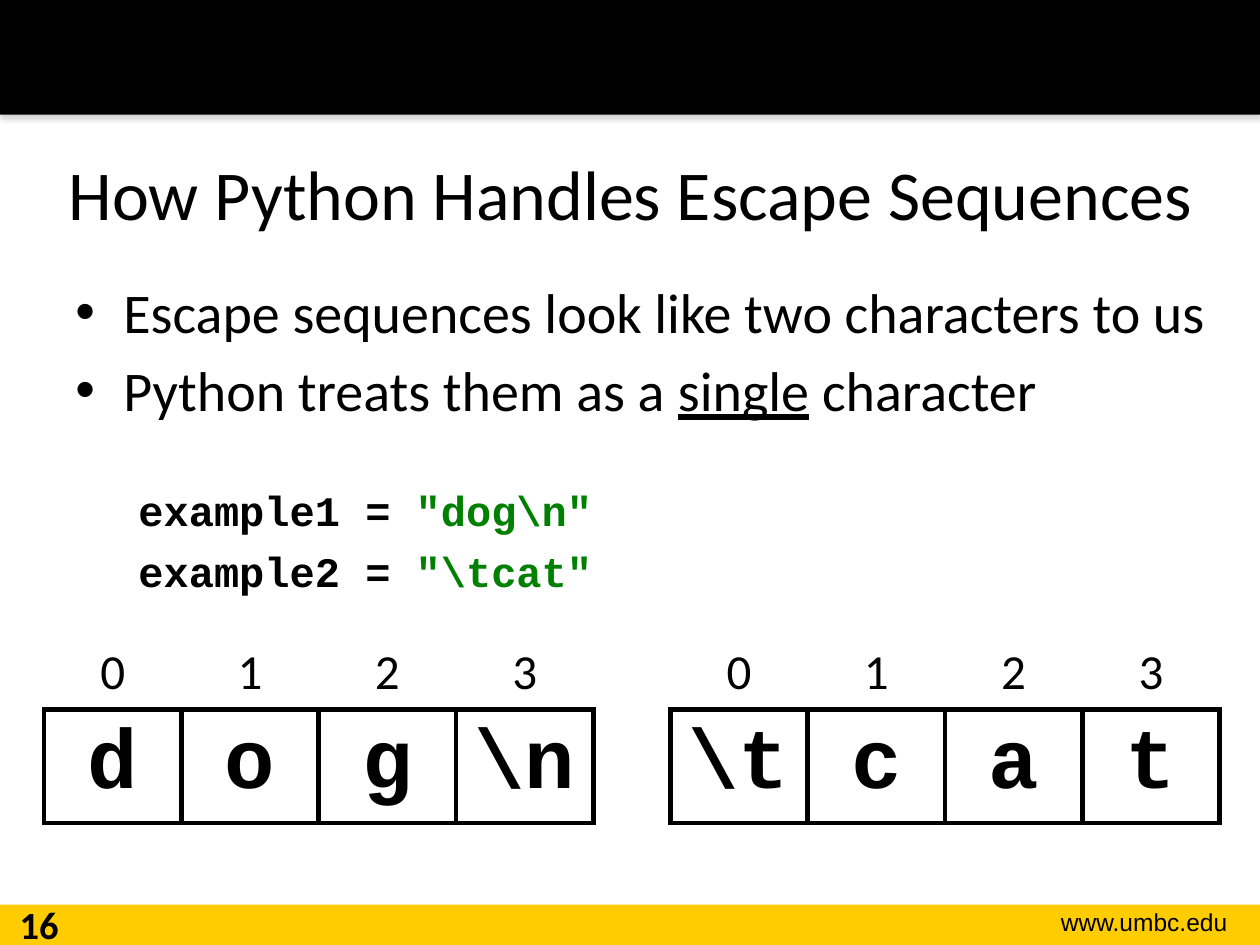
from lxml.etree import SubElement
from pptx import Presentation
from pptx.dml.color import RGBColor
from pptx.enum.shapes import MSO_SHAPE
from pptx.enum.text import MSO_ANCHOR, PP_ALIGN
from pptx.oxml import parse_xml
from pptx.oxml.ns import nsdecls, qn
from pptx.util import Inches, Pt

HUES = {"black": "000000", "white": "FFFFFF", "gold": "FFCC00",
        "green": "008000", "grey": "808080"}
FONTS = {
    "title": {"name": "Calibri", "size": Pt(40)},
    "point": {"name": "Calibri", "size": Pt(32)},
    "code": {"name": "Courier New", "size": Pt(24), "bold": True},
    "index": {"name": "Calibri", "size": Pt(28), "bold": False},
    "char": {"name": "Courier New", "size": Pt(48), "bold": True},
    "page": {"name": "Calibri", "size": Pt(22), "bold": True},
    "site": {"name": "Arial", "size": Pt(14)},
}


def add_run(para, text, kind, hue="black", line=False):
    run = para.add_run()
    run.text = text
    for key, value in FONTS[kind].items():
        setattr(run.font, key, value)
    run.font.color.rgb = RGBColor.from_string(HUES[hue])
    if line:
        run.font.underline = True


def add_box(left, top, width, height, anchor=MSO_ANCHOR.TOP):
    box = slide.shapes.add_textbox(Inches(left), Inches(top),
                                   Inches(width), Inches(height))
    frame = box.text_frame
    frame.word_wrap = True
    frame.vertical_anchor = anchor
    return frame


deck = Presentation()
deck.slide_width, deck.slide_height = Inches(10), Inches(7.5)
slide = deck.slides.add_slide(deck.slide_layouts[6])

# Bars at foot and head
for top, height, hue in [(7.18, 0.32, "gold"), (0, 0.91, "black")]:
    bar = slide.shapes.add_shape(MSO_SHAPE.RECTANGLE, 0, Inches(top),
                                 Inches(10), Inches(height))
    bar.shadow.inherit = False
    bar.fill.solid()
    bar.fill.fore_color.rgb = RGBColor.from_string(HUES[hue])
    bar.line.fill.background()

# Soft shadow under the head bar
glow = bar._element.spPr.find(qn("a:effectLst"))
shade = SubElement(glow, qn("a:outerShdw"), blurRad=str(Pt(3.1)),
                   dist=str(Pt(1.8)), dir="5400000", rotWithShape="0")
tint = SubElement(shade, qn("a:srgbClr"), val=HUES["grey"])
SubElement(tint, qn("a:alpha"), val="35000")

# Title, page number and site
labels = [
    ("How Python Handles Escape Sequences", "title", (0.32, 0.9, 9.37, 1.25),
     MSO_ANCHOR.MIDDLE, PP_ALIGN.CENTER),
    ("16", "page", (0, 7.1, 0.62, 0.4), MSO_ANCHOR.TOP, PP_ALIGN.CENTER),
    ("www.umbc.edu", "site", (7.85, 7.15, 1.99, 0.34),
     MSO_ANCHOR.TOP, PP_ALIGN.RIGHT),
]
for text, kind, place, anchor, align in labels:
    para = add_box(*place, anchor).paragraphs[0]
    para.alignment = align
    add_run(para, text, kind)

# Bullet points, then code lines: kind, space before, runs
lines = [
    ("point", 0, [("Escape sequences look like two characters to us",)]),
    ("point", 6.4, [("Python treats them as a ",),
                    ("single", "black", True), (" character",)]),
    ("code", 35, [("example1 = ",), (r'"dog\n"', "green")]),
    ("code", 6.4, [("example2 = ",), (r'"\tcat"', "green")]),
]
body = add_box(0.5, 2.15, 9.18, 4.55)
for i, (kind, gap, runs) in enumerate(lines):
    para = body.add_paragraph() if i else body.paragraphs[0]
    props = para._p.get_or_add_pPr()
    if kind == "point":
        props.set("marL", str(Inches(0.38)))
        props.set("indent", str(Inches(-0.38)))
        SubElement(props, qn("a:buFont"), typeface="Arial")
        SubElement(props, qn("a:buChar"), char="•")
    else:
        props.set("marL", str(Inches(0.5)))
    if gap:
        para.space_before = Pt(gap)
    for run in runs:
        add_run(para, run[0], kind, *run[1:])

# Character tables: index row above boxed characters
for left, chars in [(0.35, ["d", "o", "g", r"\n"]),
                    (5.32, [r"\t", "c", "a", "t"])]:
    grid = slide.shapes.add_table(2, 4, Inches(left), Inches(5.05),
                                  Inches(4.36), Inches(1.41)).table
    grid.first_row = grid.horz_banding = False
    grid.rows[0].height, grid.rows[1].height = Inches(0.58), Inches(0.83)
    rows = [("index", range(4), MSO_ANCHOR.BOTTOM, "B"),
            ("char", chars, MSO_ANCHOR.MIDDLE, "LRTB")]
    for r, (kind, texts, anchor, sides) in enumerate(rows):
        for c, text in enumerate(texts):
            grid.columns[c].width = Inches(1.09)
            cell = grid.cell(r, c)
            cell.vertical_anchor = anchor
            if kind == "char":
                cell.fill.solid()
                cell.fill.fore_color.rgb = RGBColor.from_string(HUES["white"])
            else:
                cell.fill.background()
            para = cell.text_frame.paragraphs[0]
            para.alignment = PP_ALIGN.CENTER
            add_run(para, str(text), kind)
            props = cell._tc.get_or_add_tcPr()
            for n, side in enumerate(sides):
                props.insert(n, parse_xml(
                    f'<a:ln{side} {nsdecls("a")} w="{Pt(3)}"><a:solidFill>'
                    f'<a:srgbClr val="{HUES["black"]}"/></a:solidFill>'
                    f'</a:ln{side}>'))

deck.save("out.pptx")
